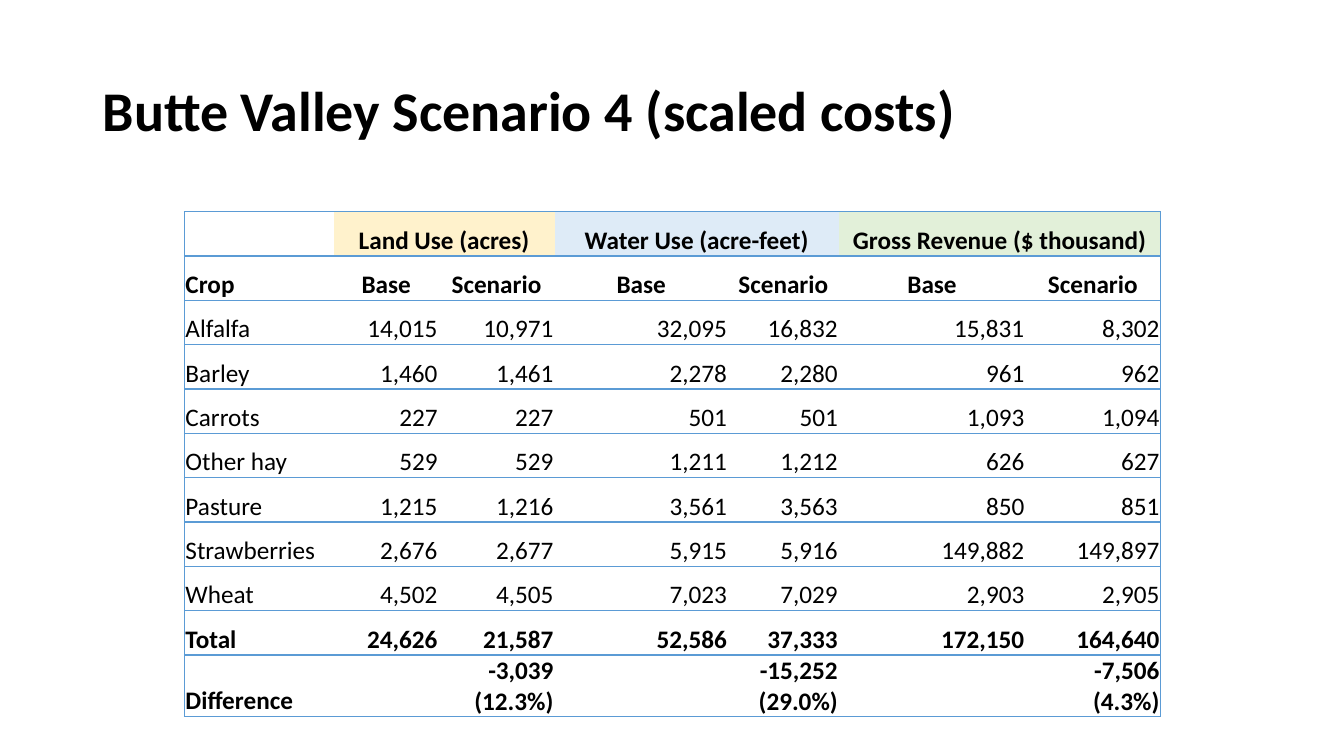
from dataclasses import dataclass

from lxml.etree import SubElement
from pptx import Presentation
from pptx.dml.color import RGBColor
from pptx.enum.text import MSO_ANCHOR, PP_ALIGN
from pptx.oxml.ns import qn
from pptx.util import Inches, Pt


@dataclass(frozen=True)
class Theme:
    font: str = "Calibri"
    title_size: int = 40
    table_size: int = 18
    text: str = "000000"
    plain: str = "FFFFFF"
    rule: str = "5B9BD5"
    rule_width: int = 1


THEME = Theme()
NO_GRID_STYLE = "{2D5ABB26-0587-4C30-8999-92F81FD0307C}"

COLUMN_WIDTHS = [1.48, 1.04, 1.15, 1.72, 1.1, 1.85, 1.34]
ROW_HEIGHT = 0.44
GROUPS = [
    ("Land Use (acres)", "FFF2CC"),
    ("Water Use (acre-feet)", "DEEBF7"),
    ("Gross Revenue ($ thousand)", "E2F0D9"),
]
CROPS = [
    ["Alfalfa", "14,015", "10,971", "32,095", "16,832", "15,831", "8,302"],
    ["Barley", "1,460", "1,461", "2,278", "2,280", "961", "962"],
    ["Carrots", "227", "227", "501", "501", "1,093", "1,094"],
    ["Other hay", "529", "529", "1,211", "1,212", "626", "627"],
    ["Pasture", "1,215", "1,216", "3,561", "3,563", "850", "851"],
    ["Strawberries", "2,676", "2,677", "5,915", "5,916", "149,882", "149,897"],
    ["Wheat", "4,502", "4,505", "7,023", "7,029", "2,903", "2,905"],
]
TOTALS = [
    ["Total", "24,626", "21,587", "52,586", "37,333", "172,150", "164,640"],
    ["Difference", "", "-3,039 (12.3%)", "", "-15,252 (29.0%)", "", "-7,506 (4.3%)"],
]


def style_runs(para, size, bold):
    for span in para.runs:
        span.font.name = THEME.font
        span.font.size = Pt(size)
        span.font.bold = bold
        span.font.color.rgb = RGBColor.from_string(THEME.text)


def add_title(page, text):
    box = page.shapes.add_textbox(Inches(0.92), Inches(0.4), Inches(11.5), Inches(1.45))
    frame = box.text_frame
    frame.word_wrap = True
    frame.vertical_anchor = MSO_ANCHOR.MIDDLE
    frame.text = text
    para = frame.paragraphs[0]
    para.line_spacing = 0.9
    style_runs(para, THEME.title_size, True)


def add_borders(cell, sides):
    """Draw rules on the given sides, in the order L, R, T, B."""
    properties = cell._tc.get_or_add_tcPr()
    for side in sides:
        line = SubElement(properties, qn(f"a:ln{side}"), w=str(Pt(THEME.rule_width)))
        fill = SubElement(line, qn("a:solidFill"))
        SubElement(fill, qn("a:srgbClr"), val=THEME.rule)


def fill_cell(cell, text, align, bold, fill, sides):
    add_borders(cell, sides)
    cell.fill.solid()
    cell.fill.fore_color.rgb = RGBColor.from_string(fill)
    cell.margin_left = cell.margin_right = cell.margin_top = Inches(0.01)
    cell.margin_bottom = 0
    cell.vertical_anchor = MSO_ANCHOR.BOTTOM
    cell.text_frame.text = text
    para = cell.text_frame.paragraphs[0]
    para.alignment = align
    style_runs(para, THEME.table_size, bold)


def add_crop_table(page):
    # Gather the rows: group headings, column headings, crops, totals
    group_row = [""]
    group_fills = [THEME.plain]
    for label, fill in GROUPS:
        group_row += [label, ""]
        group_fills += [fill, fill]
    heading_row = ["Crop"] + ["Base", "Scenario"] * len(GROUPS)
    rows = [group_row, heading_row] + CROPS + TOTALS
    first_total = len(rows) - len(TOTALS)
    last_column = len(COLUMN_WIDTHS) - 1

    # Lay out the grid
    frame = page.shapes.add_table(
        len(rows), len(COLUMN_WIDTHS), Inches(1.83), Inches(2.1),
        Inches(sum(COLUMN_WIDTHS)), Inches(ROW_HEIGHT * len(rows)))
    table = frame.table
    table._tbl.tblPr.find(qn("a:tableStyleId")).text = NO_GRID_STYLE
    table.first_row = table.horz_banding = False
    for column, width in zip(table.columns, COLUMN_WIDTHS):
        column.width = Inches(width)
    for row in table.rows:
        row.height = Inches(ROW_HEIGHT)
    for start in range(1, last_column, 2):
        table.cell(0, start).merge(table.cell(0, start + 1))

    # Fill the cells
    for row_index, values in enumerate(rows):
        is_heading = row_index < 2
        for column_index, text in enumerate(values):
            cell = table.cell(row_index, column_index)
            right_column = column_index + cell.span_width - 1
            sides = "L" * (column_index == 0) + "R" * (right_column == last_column) + "TB"
            if column_index == 0:
                align = PP_ALIGN.LEFT
            else:
                align = PP_ALIGN.CENTER if is_heading else PP_ALIGN.RIGHT
            bold = is_heading or row_index >= first_total
            fill = group_fills[column_index] if row_index == 0 else THEME.plain
            fill_cell(cell, text, align, bold, fill, sides)


def main():
    deck = Presentation()
    deck.slide_width = Inches(13.33)
    deck.slide_height = Inches(7.5)
    page = deck.slides.add_slide(deck.slide_layouts[6])
    add_title(page, "Butte Valley Scenario 4 (scaled costs)")
    add_crop_table(page)
    deck.save("out.pptx")


if __name__ == "__main__":
    main()
